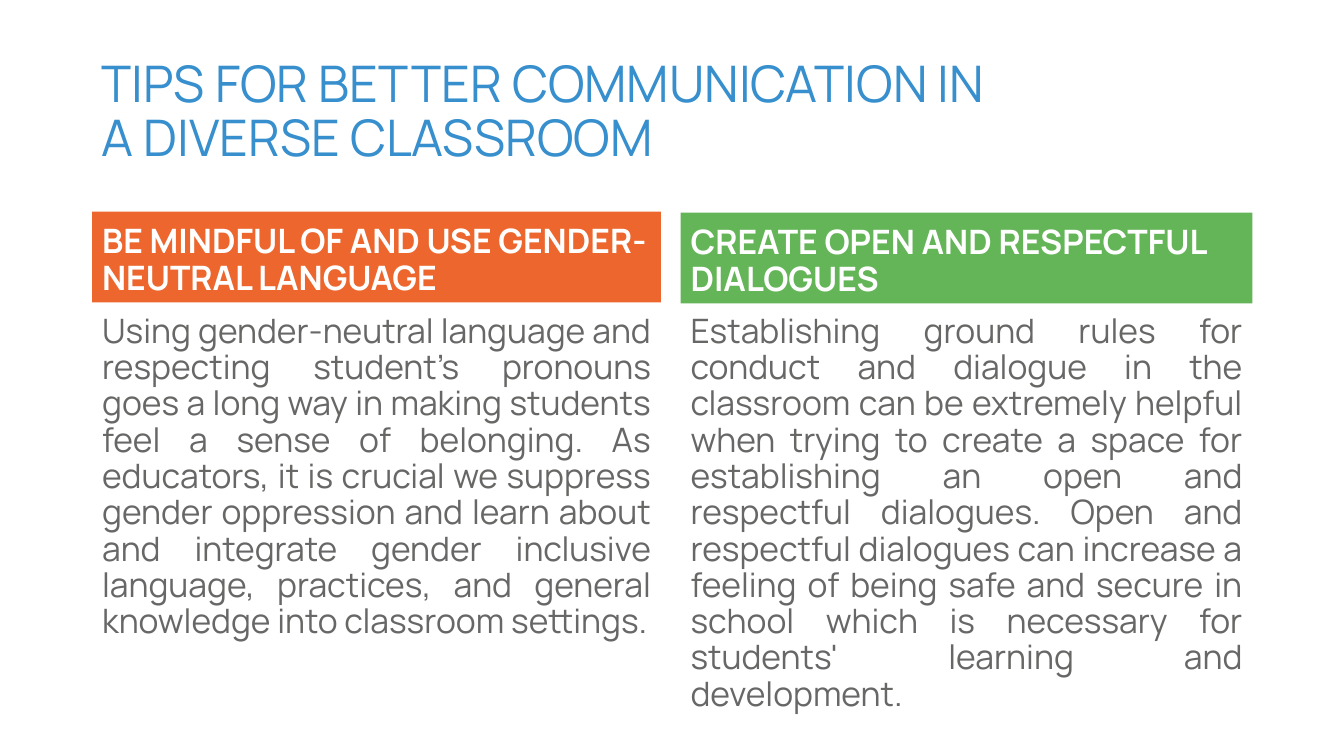
from pptx import Presentation
from pptx import util as u
from pptx.dml.color import RGBColor
from pptx.enum import shapes, text


def colour(value):
    return RGBColor.from_string(value)


class Deck:
    """Style and current slide; lengths are percentages of the slide's size."""

    FONT = "Manrope"
    BLUE, GREY, WHITE = "378FCD", "676766", "FFFFFF"
    ORANGE, GREEN = "EC662D", "64B558"

    def __init__(self):
        self.prs = Presentation()
        self.prs.slide_width = u.Inches(13.33)
        self.prs.slide_height = u.Inches(7.5)
        self.s = self.prs.slides.add_slide(self.prs.slide_layouts[6])

    def area(self, left, top, width, height):
        w, h = self.prs.slide_width / 100, self.prs.slide_height / 100
        return int(left * w), int(top * h), int(width * w), int(height * h)

    def set_text(self, sp, words, size, ink, anchor, align=text.PP_ALIGN.LEFT, bold=False):
        tf = sp.text_frame
        tf.word_wrap = True
        tf.vertical_anchor = anchor
        p = tf.paragraphs[0]
        p.text = words
        p.alignment = align
        p.line_spacing = 0.9
        p.font.name = self.FONT
        p.font.size = u.Pt(size)
        p.font.bold = bold
        p.font.color.rgb = colour(ink)

    def title(self, words, *box):
        sp = self.s.shapes.add_textbox(*self.area(*box))
        self.set_text(sp, words, 36, self.BLUE, text.MSO_ANCHOR.MIDDLE)

    def heading(self, words, fill, *box):
        sp = self.s.shapes.add_shape(shapes.MSO_SHAPE.RECTANGLE, *self.area(*box))
        sp.shadow.inherit = False
        sp.fill.solid()
        sp.fill.fore_color.rgb = colour(fill)
        sp.line.fill.background()
        self.set_text(sp, words, 24, self.WHITE, text.MSO_ANCHOR.BOTTOM, bold=True)

    def body(self, words, *box):
        sp = self.s.shapes.add_textbox(*self.area(*box))
        self.set_text(sp, words, 24, self.GREY, text.MSO_ANCHOR.TOP, text.PP_ALIGN.JUSTIFY)


def main():
    deck = Deck()
    deck.title("TIPS FOR BETTER COMMUNICATION IN A DIVERSE CLASSROOM",
               6.83, 5.33, 70.22, 19.33)

    # left, width, heading top, body height, fill, heading, body
    tips = [
        (6.86, 42.31, 28, 59.07, deck.ORANGE,
         "BE MINDFUL OF AND USE GENDER-NEUTRAL LANGUAGE",
         "Using gender-neutral language and respecting student’s pronouns goes a "
         "long way in making students feel a sense of belonging. As educators, it "
         "is crucial we suppress gender oppression and learn about and integrate "
         "gender inclusive language, practices, and general knowledge into "
         "classroom settings."),
        (50.64, 42.54, 28.13, 48.67, deck.GREEN,
         "CREATE OPEN AND RESPECTFUL DIALOGUES",
         "Establishing ground rules for conduct and dialogue in the classroom can "
         "be extremely helpful when trying to create a space for establishing an "
         "open and respectful dialogues. Open and respectful dialogues can "
         "increase a feeling of being safe and secure in school which is "
         "necessary for students' learning and development."),
    ]
    for left, width, top, height, fill, heading, body in tips:
        deck.body(body, left, 40.93, width, height)
        deck.heading(heading, fill, left, top, width, 12)

    deck.prs.save("out.pptx")


if __name__ == "__main__":
    main()
